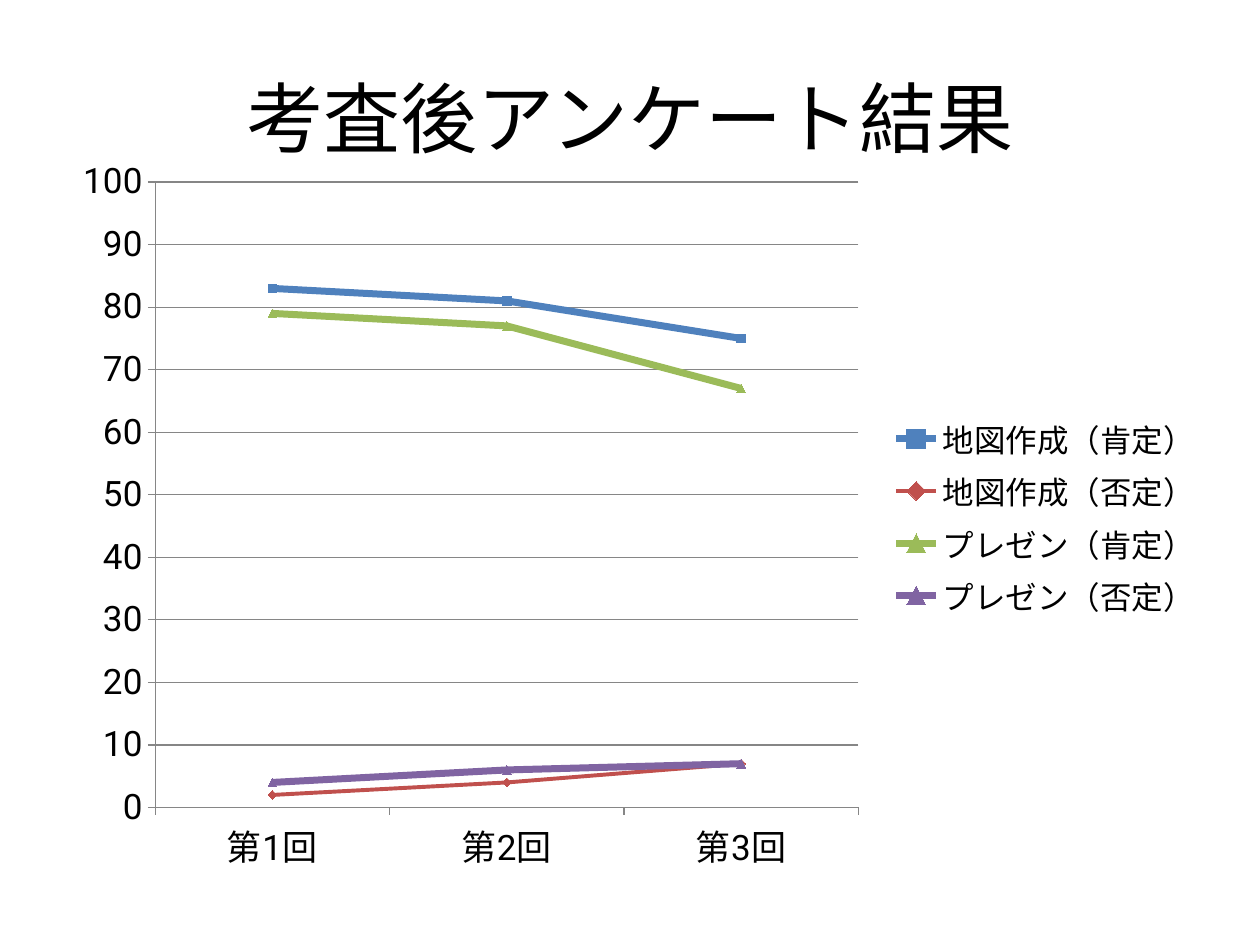
import pptx
import pptx.chart.data
import pptx.dml.color
import pptx.enum.chart
import pptx.enum.text
import pptx.oxml
import pptx.util
from pptx.util import Inches

FONT = "Roboto"
BLACK, GRAY = "000000", "868686"
ROUNDS = ["第1回", "第2回", "第3回"]
MARKER = pptx.enum.chart.XL_MARKER_STYLE
# Name, values, colour, line width in points, marker
SERIES = [
    ("地図作成（肯定）", (83, 81, 75), "4F81BD", 4, MARKER.SQUARE),
    ("地図作成（否定）", (2, 4, 7), "C0504D", 2.25, MARKER.DIAMOND),
    ("プレゼン（肯定）", (79, 77, 67), "9BBB59", 4, MARKER.TRIANGLE),
    ("プレゼン（否定）", (4, 6, 7), "8064A2", 4, MARKER.TRIANGLE),
]


def rgb(color):
    return pptx.dml.color.RGBColor.from_string(color)


def style_font(font, size):
    font.name = FONT
    font.size = pptx.util.Pt(size)
    font.bold = False
    font.color.rgb = rgb(BLACK)


def style_line(line, color, width):
    line.color.rgb = rgb(color)
    line.width = pptx.util.Pt(width)


def set_plot_area(chart, x, y, w, h):
    """Fix the inner plot area, in fractions of the chart."""
    plot_area = chart.plots[0]._element.getparent()
    for old in plot_area.findall(pptx.oxml.ns.qn("c:layout")):
        plot_area.remove(old)
    parts = "".join(f'<c:{tag} val="{val}"/>' for tag, val in (
        ("layoutTarget", "inner"), ("xMode", "edge"), ("yMode", "edge"),
        ("x", x), ("y", y), ("w", w), ("h", h)))
    ns = pptx.oxml.ns.nsdecls("c")
    plot_area.insert(0, pptx.oxml.parse_xml(
        f"<c:layout {ns}><c:manualLayout>{parts}</c:manualLayout></c:layout>"))


def add_title(s, text, left, top, width, height):
    title = s.shapes.title
    title.left, title.top, title.width, title.height = left, top, width, height
    tf = title.text_frame
    tf.text = text
    tf.vertical_anchor = pptx.enum.text.MSO_ANCHOR.MIDDLE
    p = tf.paragraphs[0]
    p.alignment = pptx.enum.text.PP_ALIGN.CENTER
    style_font(p.font, 44)


def add_survey_chart(s, left, top, width, height):
    data = pptx.chart.data.CategoryChartData()
    data.categories = ROUNDS
    for name, values, *_ in SERIES:
        data.add_series(name, values)
    chart = s.shapes.add_chart(pptx.enum.chart.XL_CHART_TYPE.LINE_MARKERS,
                               left, top, width, height, data).chart
    chart.has_title = False
    style_font(chart.font, 10)
    set_plot_area(chart, 0.08, 0.05, 0.61, 0.84)

    # Axes and gridlines
    for axis in (chart.category_axis, chart.value_axis):
        style_font(axis.tick_labels.font, 20)
        axis.major_tick_mark = pptx.enum.chart.XL_TICK_MARK.OUTSIDE
        style_line(axis.format.line, GRAY, 0.75)
    axis = chart.value_axis
    axis.minimum_scale, axis.maximum_scale, axis.major_unit = 0, 100, 10
    axis.has_major_gridlines = True
    style_line(axis.major_gridlines.format.line, GRAY, 0.75)

    # Legend
    chart.has_legend = True
    chart.legend.position = pptx.enum.chart.XL_LEGEND_POSITION.RIGHT
    chart.legend.include_in_layout = False
    style_font(chart.legend.font, 18)

    # Lines and markers
    plot = chart.plots[0]
    plot.vary_by_categories = False
    for series, (_, _, color, width, marker) in zip(plot.series, SERIES):
        series.smooth = False
        style_line(series.format.line, color, width)
        series.marker.style = marker
        series.marker.size = 5
        series.marker.format.fill.solid()
        series.marker.format.fill.fore_color.rgb = rgb(color)
        style_line(series.marker.format.line, color, 0.75)


def main():
    prs = pptx.Presentation()
    prs.slide_width, prs.slide_height = Inches(10), Inches(7.5)
    s = prs.slides.add_slide(prs.slide_layouts.get_by_name("Title Only"))
    add_title(s, "考査後アンケート結果",
              Inches(0.5), Inches(0.3), Inches(9), Inches(1.25))
    add_survey_chart(s, Inches(0.5), Inches(1.15), Inches(9.15), Inches(5.91))
    prs.save("out.pptx")


if __name__ == "__main__":
    main()
